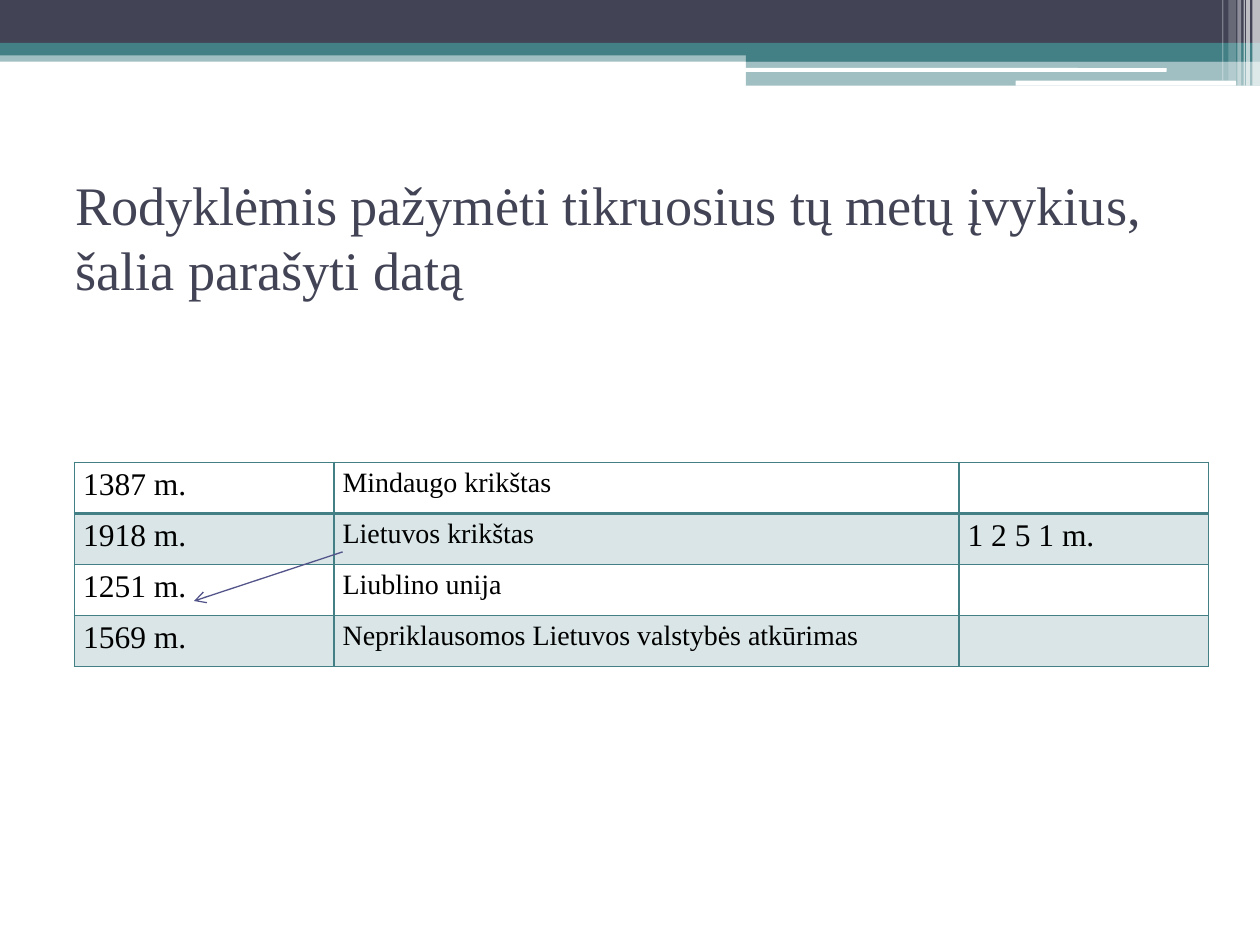
"""Build a history slide that matches years with events in a table."""
from lxml.etree import SubElement
from pptx import Presentation
from pptx.dml.color import RGBColor
from pptx.enum.shapes import MSO_CONNECTOR, MSO_SHAPE
from pptx.enum.text import MSO_ANCHOR, PP_ALIGN
from pptx.oxml.ns import qn
from pptx.util import Inches, Pt

COLORS = {"navy": "424456", "teal": "438086", "white": "FFFFFF", "black": "000000", "arrow": "53548A"}
FONT = "Times New Roman"


def fill_solid(fill, color, opacity=100):
    fill.solid()
    fill.fore_color.rgb = RGBColor.from_string(COLORS[color])
    if opacity < 100:
        color_element = fill._xPr.find(qn("a:solidFill"))[0]
        SubElement(color_element, qn("a:alpha"), val=str(opacity * 1000))


def style_font(paragraph, size, color):
    paragraph.font.name = FONT
    paragraph.font.size = Pt(size)
    paragraph.font.color.rgb = RGBColor.from_string(COLORS[color])


deck = Presentation()
deck.slide_width, deck.slide_height = Inches(10), Inches(7.5)
page = deck.slides.add_slide(deck.slide_layouts[6])

bands = [
    (MSO_SHAPE.RECTANGLE, 0, 0.4, 10, 0.09, "teal", 50),
    (MSO_SHAPE.RECTANGLE, 0, 0, 10, 0.34, "navy", 100),
    (MSO_SHAPE.RECTANGLE, 0, 0.34, 10, 0.1, "teal", 100),
    (MSO_SHAPE.RECTANGLE, 5.92, 0.39, 4.08, 0.1, "teal", 100),
    (MSO_SHAPE.RECTANGLE, 5.92, 0.48, 4.08, 0.2, "teal", 50),
    (MSO_SHAPE.ROUNDED_RECTANGLE, 5.91, 0.54, 3.35, 0.03, "white", 100),
    (MSO_SHAPE.ROUNDED_RECTANGLE, 8.06, 0.64, 1.75, 0.04, "white", 100),
]
stripes = [
    (9.94, 0.06, 0.68, 65), (9.89, 0.03, 0.68, 65), (9.87, 0.01, 0.68, 60),
    (9.82, 0.03, 0.68, 40), (9.75, 0.06, 0.64, 20), (9.7, 0.01, 0.64, 30),
]
bands += [(MSO_SHAPE.RECTANGLE, left, 0, width, height, "white", opacity)
          for left, width, height, opacity in stripes]
for kind, left, top, width, height, color, opacity in bands:
    band = page.shapes.add_shape(kind, Inches(left), Inches(top), Inches(width), Inches(height))
    band.shadow.inherit = False
    band.line.fill.background()
    fill_solid(band.fill, color, opacity)

title = page.shapes.add_textbox(Inches(0.5), Inches(1.25), Inches(9), Inches(1.87))
frame = title.text_frame
frame.word_wrap = True
frame.vertical_anchor = MSO_ANCHOR.MIDDLE
frame.margin_bottom = Inches(0.67)
frame.text = "Rodyklėmis pažymėti tikruosius tų metų įvykius, šalia parašyti datą"
style_font(frame.paragraphs[0], 31, "navy")

rows = [
    ("1387 m.", "Mindaugo krikštas", ""),
    ("1918 m.", "Lietuvos krikštas", "1 2 5 1 m."),
    ("1251 m.", "Liublino unija", ""),
    ("1569 m.", "Nepriklausomos Lietuvos valstybės atkūrimas", ""),
]
table = page.shapes.add_table(4, 3, Inches(0.59), Inches(3.67), Inches(9), Inches(1.62)).table
table.first_row = table.horz_banding = False
for column, width in zip(table.columns, (2.06, 4.96, 1.98)):
    column.width = Inches(width)
for row_index, texts in enumerate(rows):
    for column_index, text in enumerate(texts):
        cell = table.cell(row_index, column_index)
        cell.margin_left = cell.margin_right = Inches(0.07)
        cell.margin_top = cell.margin_bottom = 0
        cell.text = text
        para = cell.text_frame.paragraphs[0]
        para.alignment = PP_ALIGN.JUSTIFY
        para.line_spacing = 1.15
        style_font(para, 16 if column_index == 1 else 18, "black")
        properties = cell._tc.get_or_add_tcPr()
        for side in ("lnL", "lnR", "lnT", "lnB"):
            heavy = (row_index, side) in ((0, "lnB"), (1, "lnT"))
            border = SubElement(properties, qn(f"a:{side}"), w=str(Pt(2 if heavy else 1)))
            SubElement(SubElement(border, qn("a:solidFill")), qn("a:srgbClr"), val=COLORS["teal"])
        if row_index % 2:
            fill_solid(cell.fill, "teal", 20)
        else:
            cell.fill.background()

arrow = page.shapes.add_connector(
    MSO_CONNECTOR.STRAIGHT, Inches(2.72), Inches(4.38), Inches(1.54), Inches(4.77))
arrow.line.color.rgb = RGBColor.from_string(COLORS["arrow"])
arrow.line.width = Pt(0.75)
SubElement(arrow.line._get_or_add_ln(), qn("a:tailEnd"), type="arrow")
SubElement(arrow._element.spPr, qn("a:effectLst"))

deck.save("out.pptx")
